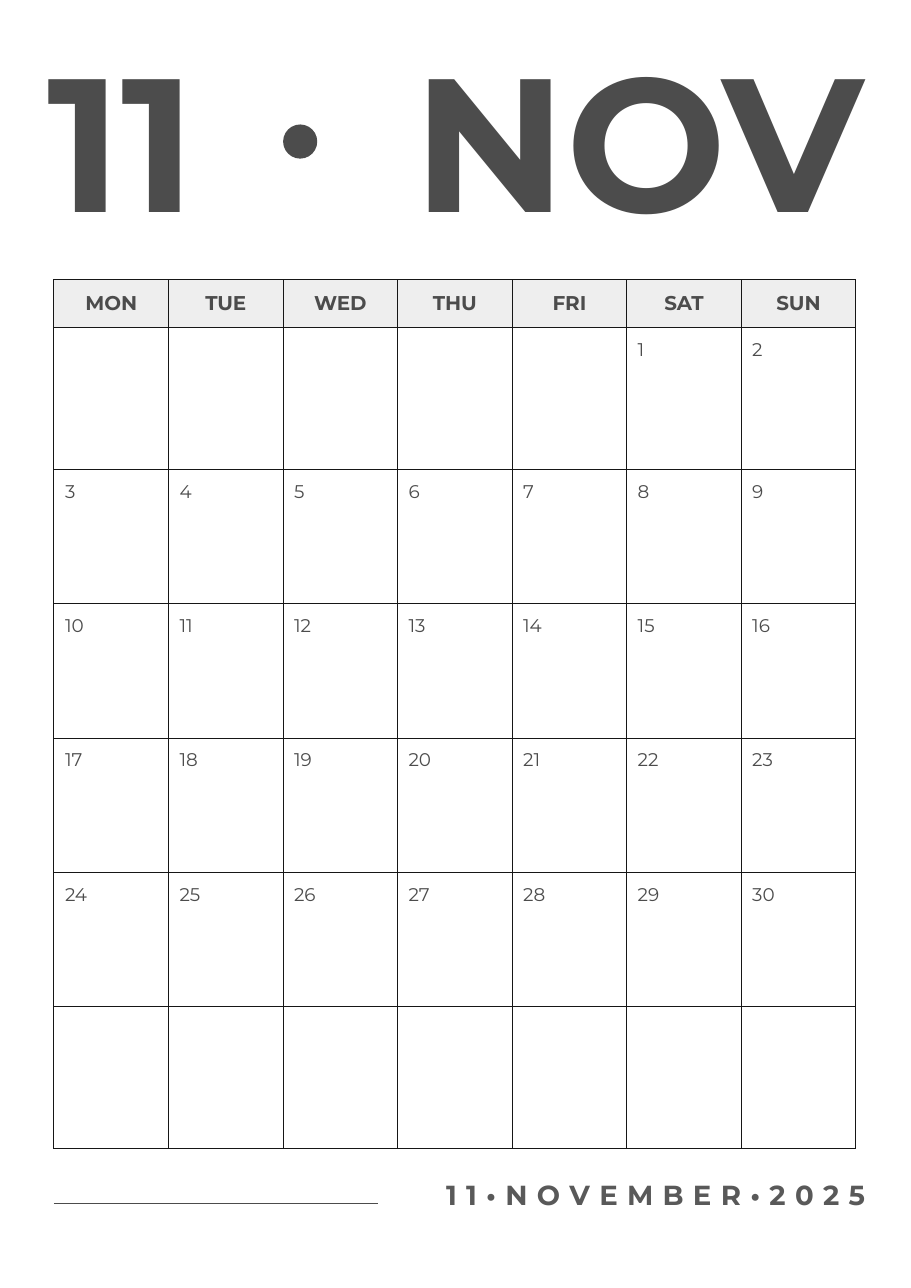
from lxml.etree import SubElement
from pptx import Presentation
from pptx.dml.color import RGBColor
from pptx.enum.shapes import MSO_CONNECTOR, MSO_SHAPE
from pptx.enum.text import MSO_ANCHOR, MSO_AUTO_SIZE, PP_ALIGN
from pptx.oxml.ns import qn
from pptx.util import Inches, Pt

DARK = RGBColor(0x4C, 0x4C, 0x4C)
GREY = RGBColor(0x59, 0x59, 0x59)
PALE = RGBColor(0xEE, 0xEE, 0xEE)
WHITE = RGBColor(0xFF, 0xFF, 0xFF)
RULE = RGBColor(0x16, 0x16, 0x16)

DAYS = ["MON", "TUE", "WED", "THU", "FRI", "SAT", "SUN"]
WEEKS = 6
FIRST = 5   # column of day 1
LAST = 30


class Page:
    font = "Montserrat"

    def __init__(self, slide):
        self.slide = slide

    def style(self, para, size, color, bold=False, align=PP_ALIGN.LEFT):
        para.alignment = align
        for run in para.runs:
            run.font.name = self.font
            run.font.size = Pt(size)
            run.font.bold = bold
            run.font.color.rgb = color

    def fit(self, shape, box, text, size, color, align=PP_ALIGN.LEFT):
        """Place a text shape without margins and fill it with bold text."""
        shape.left, shape.top, shape.width, shape.height = map(Inches, box)
        frame = shape.text_frame
        frame.text = text
        frame.word_wrap = True
        frame.auto_size = MSO_AUTO_SIZE.NONE
        frame.vertical_anchor = MSO_ANCHOR.TOP
        frame.margin_left = frame.margin_right = 0
        frame.margin_top = frame.margin_bottom = 0
        self.style(frame.paragraphs[0], size, color, True, align)

    def title(self, box, *look):
        self.fit(self.slide.shapes.title, box, *look)

    def text(self, box, *look):
        shape = self.slide.shapes.add_textbox(0, 0, 0, 0)
        self.fit(shape, box, *look)
        return shape

    def dot(self, *box):
        shape = self.slide.shapes.add_shape(MSO_SHAPE.OVAL, *map(Inches, box))
        shape.shadow.inherit = False
        shape.fill.solid()
        shape.fill.fore_color.rgb = DARK
        shape.line.fill.background()

    def line(self, *ends):
        line = self.slide.shapes.add_connector(
            MSO_CONNECTOR.STRAIGHT, *map(Inches, ends))
        line.line.color.rgb = DARK
        line.line.width = Pt(0.75)
        SubElement(line._element.spPr, qn("a:effectLst"))

    def cell(self, cell, fill, sides):
        """Fill a cell and draw only the named sides (L, R, T, B)."""
        props = cell._tc.get_or_add_tcPr()
        for side in "LRTB":
            edge = SubElement(props, qn(f"a:ln{side}"), w=str(Pt(0.75)))
            if side in sides:
                paint = SubElement(edge, qn("a:solidFill"))
                SubElement(paint, qn("a:srgbClr"), val=str(RULE))
            else:
                SubElement(edge, qn("a:noFill"))
        cell.fill.solid()
        cell.fill.fore_color.rgb = fill

    def label(self, cell, text, *look):
        cell.margin_left = cell.margin_right = Inches(0.1)
        cell.margin_top = cell.margin_bottom = Inches(0.1)
        cell.text = text
        self.style(cell.text_frame.paragraphs[0], *look)

    def month(self, left, top, wide):
        """Draw the weekday heads, then a date row and a note row per week."""
        tall = [0.43]
        for week in range(WEEKS):
            tall += [0.48 if week in (0, WEEKS - 1) else 0.41, 0.81]
        table = self.slide.shapes.add_table(
            len(tall), len(DAYS), Inches(left), Inches(top),
            Inches(wide * len(DAYS)), Inches(sum(tall))).table
        table.first_row = table.horz_banding = False
        for row, high in zip(table.rows, tall):
            row.height = Inches(high)
        for col, name in enumerate(DAYS):
            table.columns[col].width = Inches(wide)
            head = table.cell(0, col)
            self.cell(head, PALE, "LRTB")
            self.label(head, name, 13, DARK, True, PP_ALIGN.CENTER)
            head.vertical_anchor = MSO_ANCHOR.MIDDLE
            for week in range(WEEKS):
                date = table.cell(2 * week + 1, col)
                self.cell(date, WHITE, "LRT")
                self.cell(table.cell(2 * week + 2, col), WHITE, "LRB")
                day = week * len(DAYS) + col - FIRST + 1
                if 1 <= day <= LAST:
                    self.label(date, str(day), 12, DARK)


def main():
    deck = Presentation()
    deck.slide_width, deck.slide_height = Inches(8.27), Inches(11.69)
    page = Page(deck.slides.add_slide(deck.slide_layouts[5]))

    page.month(0.49, 2.54, 1.04)
    page.line(0.49, 10.92, 3.43, 10.92)
    foot = page.text((3.52, 10.69, 4.34, 0.3), "1 1 • N O V E M B E R • 2 0 2 5",
                     18, GREY, PP_ALIGN.RIGHT)
    for run in foot.text_frame.paragraphs[0].runs:
        run.font._element.set("spc", "50")
    page.text((0.43, 0.21, 2.69, 2.09), "11", 124, DARK)
    page.title((3.5, 0.21, 4.34, 2.09), "NOV", 124, DARK, PP_ALIGN.RIGHT)
    page.dot(2.57, 1.13, 0.31, 0.31)
    deck.save("out.pptx")


if __name__ == "__main__":
    main()
